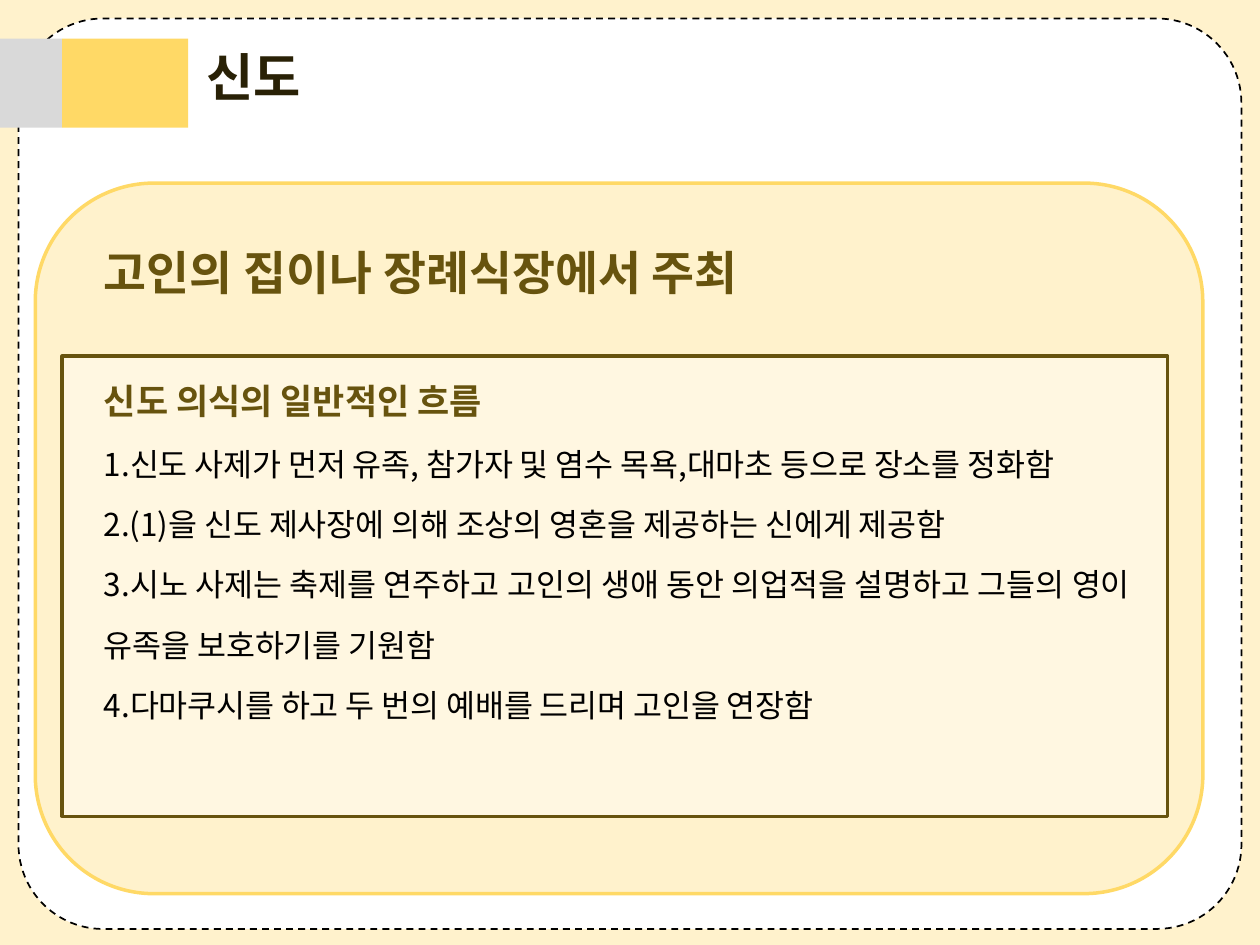
from dataclasses import dataclass
from lxml.etree import SubElement as Sub
from pptx import Presentation
from pptx.dml.color import RGBColor as RGB
from pptx.enum.dml import MSO_LINE as Dash
from pptx.enum.shapes import MSO_SHAPE as Kind
from pptx.enum.text import MSO_ANCHOR as Anchor, MSO_AUTO_SIZE as Fit, PP_ALIGN as Align
from pptx.oxml.ns import qn
from pptx.util import Inches, Pt


@dataclass(frozen=True)
class Theme:
    cream: str = "FFF2CC"
    gold: str = "FFD966"
    brown: str = "67530E"
    dark: str = "292106"
    gray: str = "D9D9D9"
    white: str = "FFFFFF"
    black: str = "000000"
    sans: str = "Noto Sans CJK KR"
    latin: str = "Calibri"
    title: float = 22
    head: float = 20
    sub: float = 15
    body: float = 13.5
    thin: float = 0.75
    thick: float = 1.5


THEME = Theme()

STEPS = (
    "1.신도 사제가 먼저 유족, 참가자 및 염수 목욕,대마초 등으로 장소를 정화함",
    "2.(1)을 신도 제사장에 의해 조상의 영혼을 제공하는 신에게 제공함",
    "3.시노 사제는 축제를 연주하고 고인의 생애 동안 의업적을 설명하고 그들의 영이 유족을 보호하기를 기원함",
    "4.다마쿠시를 하고 두 번의 예배를 드리며 고인을 연장함 ",
)


def color(code):
    return RGB.from_string(code)


def add_box(slide, area, fill, line=None, width=0, round_by=None, alpha=None):
    kind = Kind.RECTANGLE if round_by is None else Kind.ROUNDED_RECTANGLE
    box = slide.shapes.add_shape(kind, *map(Inches, area))
    box.shadow.inherit = False
    if round_by is not None:
        box.adjustments[0] = round_by
    box.fill.solid()
    box.fill.fore_color.rgb = color(fill)
    if alpha is not None:
        tint = box.element.spPr.find(qn("a:solidFill"))[0]
        Sub(tint, qn("a:alpha"), val=str(alpha * 1000))
    if line:
        box.line.color.rgb = color(line)
        box.line.width = Pt(width)
    else:
        box.line.fill.background()
    return box


def style(para, size, font, ink, bold):
    for run in para.runs:
        run.font.size = Pt(size)
        run.font.name = font
        run.font.bold = bold
        run.font.color.rgb = color(ink)


def set_title(slide, text, area):
    title = slide.shapes.title
    title.left, title.top, title.width, title.height = map(Inches, area)
    frame = title.text_frame
    frame.text = text
    frame.auto_size = Fit.NONE
    frame.vertical_anchor = Anchor.TOP
    para = frame.paragraphs[0]
    para.alignment = Align.LEFT
    style(para, THEME.title, THEME.sans, THEME.dark, True)
    title.element.getparent().append(title.element)


def add_text(slide, area):
    frame = slide.shapes.add_textbox(*map(Inches, area)).text_frame
    frame.word_wrap = True
    head = frame.paragraphs[0]
    head.text = "고인의 집이나 장례식장에서 주최"
    style(head, THEME.head, THEME.latin, THEME.brown, True)
    sub = frame.add_paragraph()
    sub.text = "신도 의식의 일반적인 흐름"
    sub.space_before = Pt(34.5)
    style(sub, THEME.sub, THEME.latin, THEME.brown, True)
    for step in STEPS:
        para = frame.add_paragraph()
        para.text = step
        para.alignment = Align.JUSTIFY
        para.line_spacing = 1.6
        style(para, THEME.body, THEME.sans, THEME.black, False)


def main():
    deck = Presentation()
    deck.slide_width, deck.slide_height = Inches(7.5), Inches(7.5 * 3 / 4)
    slide = deck.slides.add_slide(deck.slide_layouts[5])
    back = slide.background.fill
    back.solid()
    back.fore_color.rgb = color(THEME.cream)

    page = add_box(slide, (0.11, 0.11, 7.28, 5.42), THEME.white,
                   THEME.black, THEME.thin, 0.093)
    page.line.dash_style = Dash.DASH
    add_box(slide, (0, 0.23, 0.37, 0.53), THEME.gray)
    add_box(slide, (0.37, 0.23, 0.75, 0.53), THEME.gold)
    set_title(slide, "신도", (1.13, 0.22, 3.24, 0.46))
    add_box(slide, (0.21, 1.09, 6.95, 4.23), THEME.cream,
            THEME.gold, THEME.thick, 0.167)
    add_box(slide, (0.37, 2.12, 6.58, 2.74), THEME.white,
            THEME.brown, THEME.thick, alpha=41)
    add_text(slide, (0.52, 1.4, 6.31, 3.54))
    deck.save("out.pptx")


if __name__ == "__main__":
    main()
